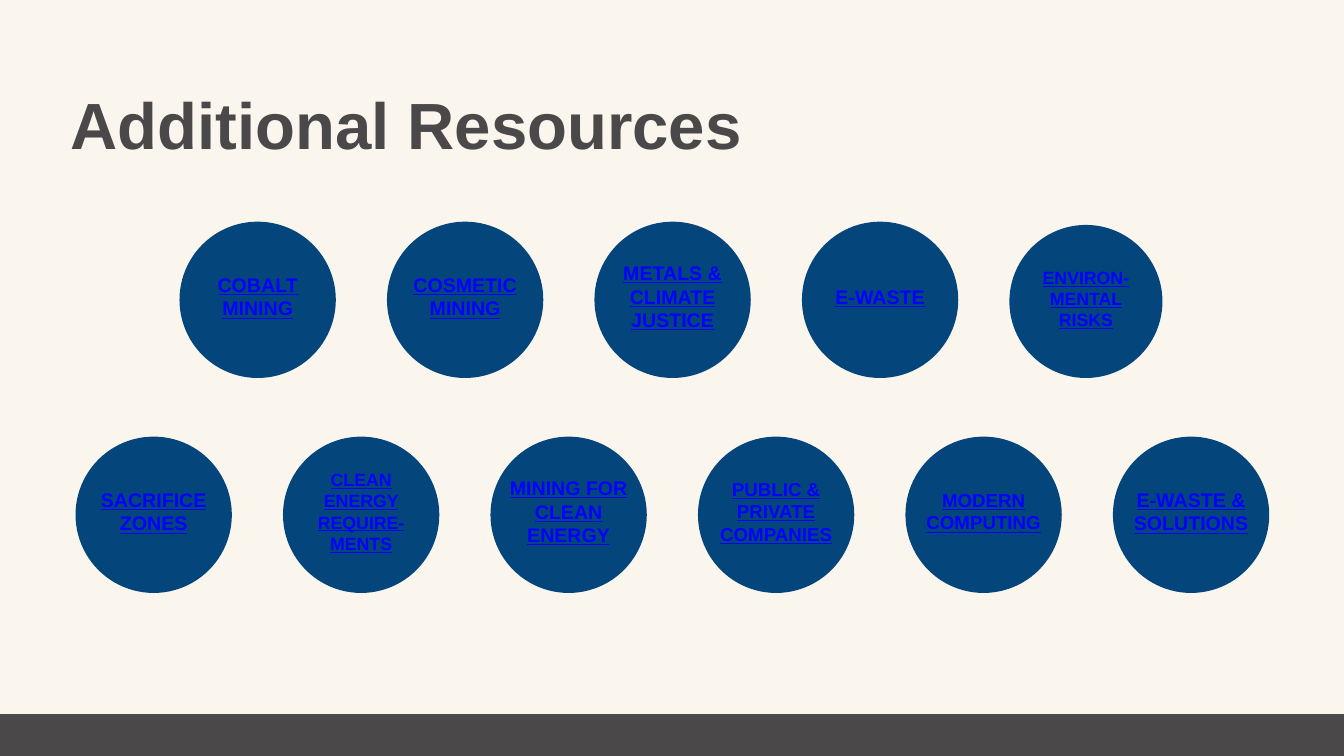
from pptx import Presentation
from pptx.dml.color import RGBColor
from pptx.enum.shapes import MSO_SHAPE
from pptx.enum.text import MSO_ANCHOR, MSO_AUTO_SIZE, PP_ALIGN
from pptx.util import Pt

BACKGROUND, DARK, CIRCLE, LINK = "FAF6EE", "4A4849", "04467C", "0000FF"
DIAMETER = 167.5
PITCH = 222.3

# left of the first circle, top, topics as (text, font size, diameter)
ROWS = [
    (192.3, 237.5, [
        ("COBALT MINING", 21, DIAMETER),
        ("COSMETIC MINING", 21, DIAMETER),
        ("METALS & CLIMATE JUSTICE", 21, DIAMETER),
        ("E-WASTE", 21, DIAMETER),
        ("ENVIRON-MENTAL RISKS", 19, 164),
    ]),
    (80.9, 467.8, [
        ("SACRIFICE ZONES", 21, DIAMETER),
        ("CLEAN ENERGY REQUIRE-MENTS", 19, DIAMETER),
        ("MINING FOR CLEAN ENERGY", 21, DIAMETER),
        ("PUBLIC & PRIVATE COMPANIES", 20, DIAMETER),
        ("MODERN COMPUTING", 20, DIAMETER),
        ("E-WASTE & SOLUTIONS", 21, DIAMETER),
    ]),
]


def rgb(color):
    return RGBColor.from_string(color)


def set_text(sp, text, color, align, anchor, margin, line_spacing, **font):
    tf = sp.text_frame
    tf.text = text
    frame = {"word_wrap": True, "auto_size": MSO_AUTO_SIZE.NONE,
             "vertical_anchor": anchor}
    for side in ("left", "top", "right", "bottom"):
        frame[f"margin_{side}"] = Pt(margin)
    for name, value in frame.items():
        setattr(tf, name, value)
    p = tf.paragraphs[0]
    p.alignment = align
    p.line_spacing = Pt(line_spacing)
    r = p.runs[0]
    for name, value in {"name": "Arial", "bold": True, **font}.items():
        setattr(r.font, name, value)
    r.font.color.rgb = rgb(color)


def add_filled_shape(shapes, kind, left, top, width, height, color):
    sp = shapes.add_shape(kind, Pt(left), Pt(top), Pt(width), Pt(height))
    sp.shadow.inherit = False
    sp.fill.solid()
    sp.fill.fore_color.rgb = rgb(color)
    sp.line.fill.background()


def add_title(s, text):
    sp = s.shapes.title
    sp.left, sp.top, sp.width, sp.height = Pt(75.6), Pt(89.3), Pt(1283), Pt(85)
    set_text(sp, text, DARK, PP_ALIGN.LEFT, MSO_ANCHOR.TOP, 0, 85, size=Pt(70))


def add_topic(s, text, size, left, top, diameter):
    """Group a circle with its label, which is wider than the circle's own text area."""
    shapes = s.shapes.add_group_shape().shapes
    add_filled_shape(shapes, MSO_SHAPE.OVAL, left, top, diameter, diameter, CIRCLE)
    width, height = 0.8125 * diameter, 0.86 * diameter
    label = shapes.add_textbox(Pt(left + (diameter - width) / 2), Pt(top + 8),
                               Pt(width), Pt(height))
    set_text(label, text, LINK, PP_ALIGN.CENTER, MSO_ANCHOR.MIDDLE, 4,
             1.2 * size, size=Pt(size), underline=True)


def main():
    prs = Presentation()
    prs.slide_width, prs.slide_height = Pt(1440), Pt(810)
    s = prs.slides.add_slide(prs.slide_layouts[5])
    s.background.fill.solid()
    s.background.fill.fore_color.rgb = rgb(BACKGROUND)

    add_title(s, "Additional Resources")
    add_filled_shape(s.shapes, MSO_SHAPE.RECTANGLE, -27.4, 765.2, 1565.3, 44.8, DARK)
    for left, top, topics in ROWS:
        for i, (text, size, diameter) in enumerate(topics):
            # Circles in a row share their bottom edge
            add_topic(s, text, size, left + i * PITCH,
                      top + DIAMETER - diameter, diameter)
    prs.save("out.pptx")


if __name__ == "__main__":
    main()
